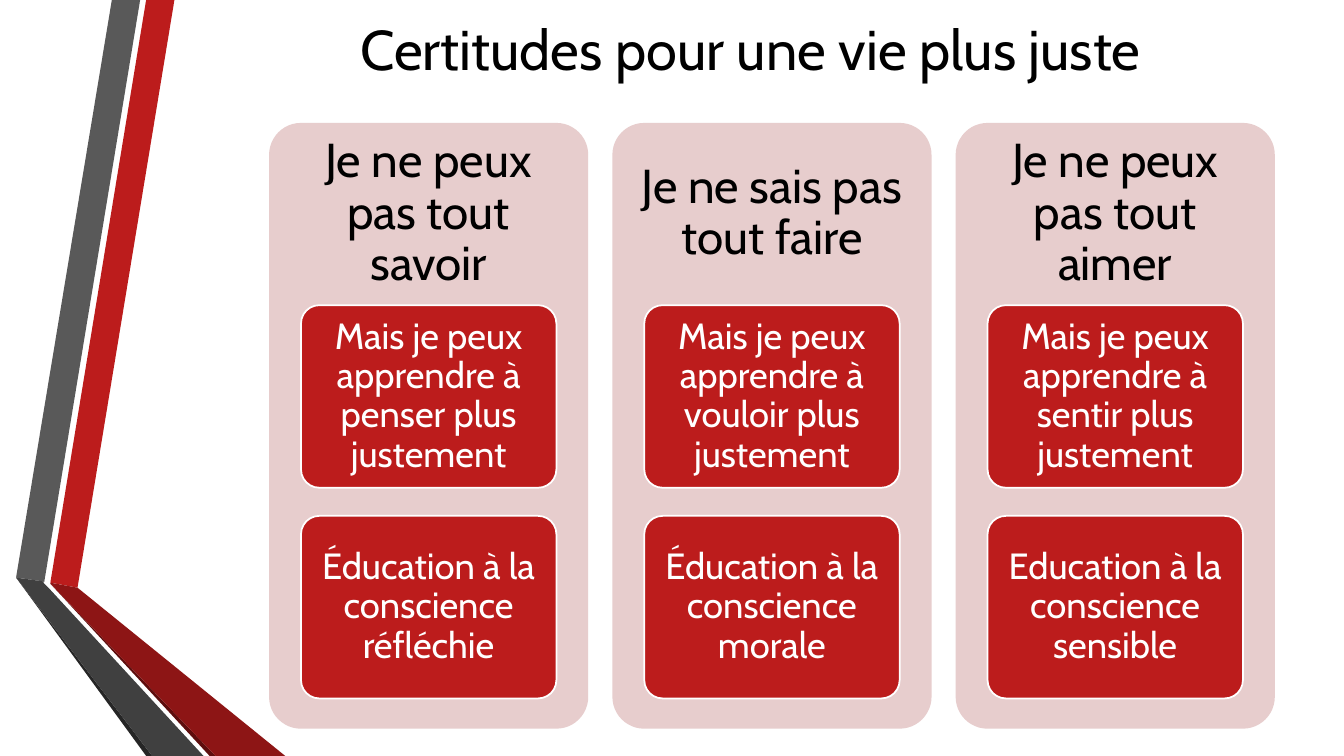
from pptx import Presentation
from pptx.dml.color import RGBColor
from pptx.enum.shapes import MSO_SHAPE as Shape
from pptx.enum.text import MSO_ANCHOR as Anchor, PP_ALIGN as Align
from pptx.util import Pt

BLACK = RGBColor(0x00, 0x00, 0x00)
WHITE = RGBColor(0xFF, 0xFF, 0xFF)
RED = RGBColor(0xBC, 0x1C, 0x1C)
PINK = RGBColor(0xE7, 0xCD, 0xCD)
GREY = RGBColor(0x59, 0x59, 0x59)
COAL = RGBColor(0x26, 0x26, 0x26)
SLATE = RGBColor(0x40, 0x40, 0x40)
WINE = RGBColor(0x5E, 0x0E, 0x0E)
BRICK = RGBColor(0x8D, 0x15, 0x15)

BANDS = [
    (RED, [(36, 416.2), (55.4, 419.8), (124.6, 0), (104.4, 0)]),
    (GREY, [(100.1, 0), (79.9, 0), (11.5, 412.6), (31.7, 415.4)]),
    (COAL, [(11.5, 412.6), (104.4, 540), (108.7, 540)]),
    (WINE, [(36, 416.9), (149.8, 540), (154.1, 540)]),
    (BRICK, [(36, 416.9), (154.1, 540), (203.8, 540), (55.4, 419.8),
             (36, 416.2)]),
    (SLATE, [(145.4, 540), (34.6, 419.8), (31, 416.2), (31.7, 415.4),
             (11.5, 412.6), (108.7, 540)]),
]

COLUMNS = [
    ("Je ne peux pas tout savoir",
     "Mais je peux apprendre à penser plus justement",
     "Éducation à la conscience réfléchie"),
    ("Je ne sais pas tout faire",
     "Mais je peux apprendre à vouloir plus justement",
     "Éducation à la conscience morale"),
    ("Je ne peux pas tout aimer",
     "Mais je peux apprendre à sentir plus justement",
     "Education à la conscience sensible"),
]

LEFT, TOP, PITCH = 192.2, 87.8, 245.2
PANEL_W, PANEL_H, HEAD_H = 228, 432.7, 129.8
CARD_W, CARD_H, CARD_TOP, CARD_STEP = 182.4, 130.4, 218, 150.5


class Deck:
    font = "Cabin"

    def __init__(self, slide):
        self.shapes = slide.shapes

    def label(self, shape, text, size, color=BLACK, inset=(7.2, 3.6, 7.2, 3.6),
              spacing=0.9):
        """Fill a shape with centred text; inset is left, top, right, bottom."""
        frame = shape.text_frame
        frame.word_wrap = True
        frame.vertical_anchor = Anchor.MIDDLE
        (frame.margin_left, frame.margin_top,
         frame.margin_right, frame.margin_bottom) = map(Pt, inset)
        para = frame.paragraphs[0]
        para.alignment = Align.CENTER
        para.line_spacing = spacing
        run = para.add_run()
        run.text = text
        run.font.name = self.font
        run.font.size = Pt(size)
        run.font.color.rgb = color

    def paint(self, shape, fill, line=None):
        shape.shadow.inherit = False
        shape.fill.solid()
        shape.fill.fore_color.rgb = fill
        if line is None:
            shape.line.fill.background()
        else:
            shape.line.color.rgb = line
            shape.line.width = Pt(1.25)

    def band(self, color, points):
        start, *rest = [(Pt(x), Pt(y)) for x, y in points]
        outline = self.shapes.build_freeform(*start)
        outline.add_line_segments(rest)
        self.paint(outline.convert_to_shape(), color)

    def title(self, text, *box):
        shape = self.shapes.add_textbox(*map(Pt, box))
        self.label(shape, text, 40, spacing=1)

    def block(self, box, fill, text, line=None, **style):
        """Add a rounded rectangle with text."""
        shape = self.shapes.add_shape(Shape.ROUNDED_RECTANGLE, *map(Pt, box))
        shape.adjustments[0] = 0.1
        self.paint(shape, fill, line)
        self.label(shape, text, **style)

    def column(self, left, head, *cards):
        self.block((left, TOP, PANEL_W, PANEL_H), PINK, head, size=34,
                   inset=(10, 10, 10, PANEL_H - HEAD_H + 10))
        side = left + (PANEL_W - CARD_W) / 2
        for row, text in enumerate(cards):
            self.block((side, CARD_TOP + row * CARD_STEP, CARD_W, CARD_H), RED,
                       text, line=WHITE, size=26, color=WHITE,
                       inset=(8.8, 7.4, 8.8, 7.4))


def main():
    prs = Presentation()
    prs.slide_width, prs.slide_height = Pt(960), Pt(540)
    deck = Deck(prs.slides.add_slide(prs.slide_layouts[6]))
    for color, points in BANDS:
        deck.band(color, points)
    deck.title("Certitudes pour une vie plus juste", 162, 0, 748, 69)
    for i, texts in enumerate(COLUMNS):
        deck.column(LEFT + i * PITCH, *texts)
    prs.save("out.pptx")


if __name__ == "__main__":
    main()
